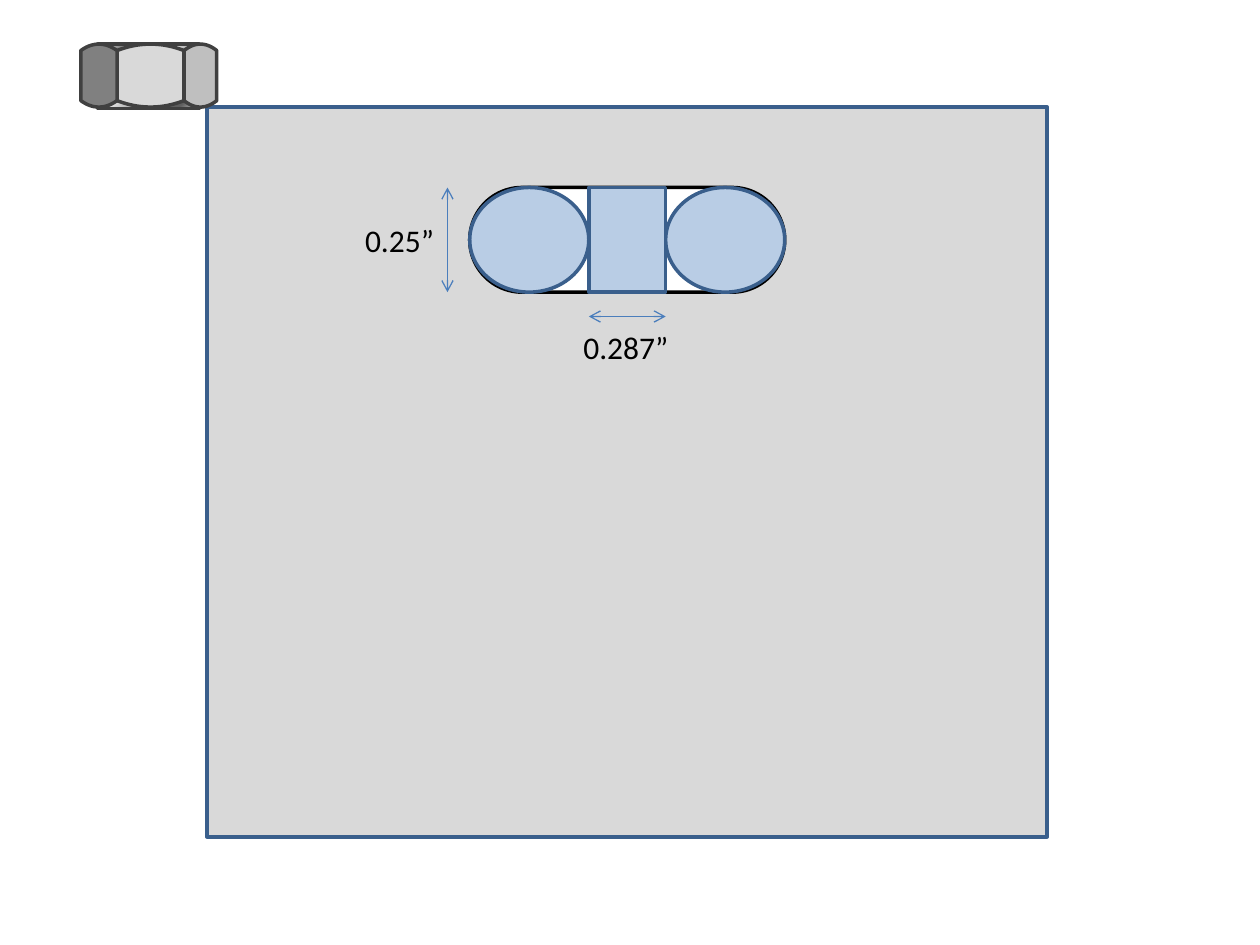
from dataclasses import dataclass

import pptx
import pptx.dml.color
import pptx.enum.shapes
import pptx.enum.text
import pptx.oxml
import pptx.oxml.ns
import pptx.util
from lxml import etree

Cm = pptx.util.Cm
Pt = pptx.util.Pt
Shape = pptx.enum.shapes.MSO_SHAPE
qn = pptx.oxml.ns.qn


@dataclass(frozen=True)
class Theme:
    font: str = "Calibri"
    label_size: int = 18
    outline_width: float = 2
    arrow_width: float = 0.75
    ink: str = "000000"
    white: str = "FFFFFF"
    plate: str = "D9D9D9"
    blue: str = "B9CDE5"
    blue_line: str = "3A5F8C"
    arrow: str = "4B7EBC"
    nut_line: str = "404040"
    nut_faces: tuple = ("808080", "D9D9D9", "BFBFBF")
    chrome: tuple = ((0, "CBCBCB"), (13, "5F5F5F"), (21, "5F5F5F"), (63, "FFFFFF"),
                     (67, "B2B2B2"), (69, "292929"), (82, "777777"), (100, "EAEAEA"))


theme = Theme()
rgb = pptx.dml.color.RGBColor.from_string


def paint(shape, fill, line):
    shape.shadow.inherit = False
    shape.fill.solid()
    shape.fill.fore_color.rgb = rgb(fill)
    shape.line.color.rgb = rgb(line)
    shape.line.width = Pt(theme.outline_width)


def add_label(text, *, left, top, width, height, size=theme.label_size, color=theme.ink):
    box = page.shapes.add_textbox(Cm(left), Cm(top), Cm(width), Cm(height))
    box.text_frame.word_wrap = False
    box.text_frame.auto_size = pptx.enum.text.MSO_AUTO_SIZE.SHAPE_TO_FIT_TEXT
    span = box.text_frame.paragraphs[0].add_run()
    span.text = text
    span.font.name = theme.font
    span.font.size = Pt(size)
    span.font.color.rgb = rgb(color)


deck = pptx.Presentation()
deck.slide_width, deck.slide_height = Cm(25.4), Cm(19.05)
page = deck.slides.add_slide(deck.slide_layouts[6])

slot_left, slot_top, slot_width, slot_height = 9.47, 3.78, 6.35, 2.11
round_width = 2.4
middle_left = slot_left + round_width
middle_right = slot_left + slot_width - round_width
slot_bottom = slot_top + slot_height

for kind, left, top, width, height, fill, line in (
    (Shape.RECTANGLE, 4.17, 2.16, 16.94, 14.71, theme.plate, theme.blue_line),
    (Shape.ROUNDED_RECTANGLE, slot_left, slot_top, slot_width, slot_height, theme.white, theme.ink),
    (Shape.OVAL, slot_left, slot_top, round_width, slot_height, theme.blue, theme.blue_line),
    (Shape.OVAL, middle_right, slot_top, round_width, slot_height, theme.blue, theme.blue_line),
    (Shape.RECTANGLE, middle_left, slot_top, middle_right - middle_left, slot_height,
     theme.blue, theme.blue_line),
):
    part = page.shapes.add_shape(kind, Cm(left), Cm(top), Cm(width), Cm(height))
    paint(part, fill, line)
    if kind == Shape.ROUNDED_RECTANGLE:
        part.adjustments[0] = 0.5

add_label("0.25”", left=7.11, top=4.34, width=1.91, height=1.02)
add_label("0.287”", left=11.51, top=6.48, width=2.24, height=1.02)

for ends in ((9.02, slot_top, 9.02, slot_bottom), (middle_right, 6.38, middle_left, 6.38)):
    arrow = page.shapes.add_connector(
        pptx.enum.shapes.MSO_CONNECTOR.STRAIGHT, *(Cm(value) for value in ends))
    arrow.line.color.rgb = rgb(theme.arrow)
    arrow.line.width = Pt(theme.arrow_width)
    for end in ("a:headEnd", "a:tailEnd"):
        etree.SubElement(arrow.line._get_or_add_ln(), qn(end), type="arrow")
    etree.SubElement(arrow._element.spPr, qn("a:effectLst"))

nut = page.shapes.add_group_shape()
nut_top, nut_bottom, bevel = 0.89, 2.16, 0.13
body = nut.shapes.add_shape(Shape.RECTANGLE, Cm(1.98), Cm(nut_top), Cm(2.03), Cm(1.3))
paint(body, theme.plate, theme.nut_line)
body.fill.gradient()
body.fill.gradient_angle = 135
stops = body._element.spPr.find(qn("a:gradFill")).find(qn("a:gsLst"))
for stop in list(stops):
    stops.remove(stop)
for position, color in theme.chrome:
    stop = etree.SubElement(stops, qn("a:gs"), pos=str(position * 1000))
    etree.SubElement(stop, qn("a:srgbClr"), val=color)

edges = (1.63, 2.36, 3.71, 4.37)
steps = [step / 10 for step in range(-10, 11)]
for left, right, fill in reversed(list(zip(edges, edges[1:], theme.nut_faces))):
    center, half = (left + right) / 2, (right - left) / 2
    upper = [(Cm(center + half * t), Cm(nut_top + bevel * t * t)) for t in steps]
    lower = [(Cm(center - half * t), Cm(nut_bottom - bevel * t * t)) for t in steps]
    outline = nut.shapes.build_freeform(*upper[0])
    outline.add_line_segments(upper[1:] + lower, close=True)
    paint(outline.convert_to_shape(), fill, theme.nut_line)

deck.save("out.pptx")
